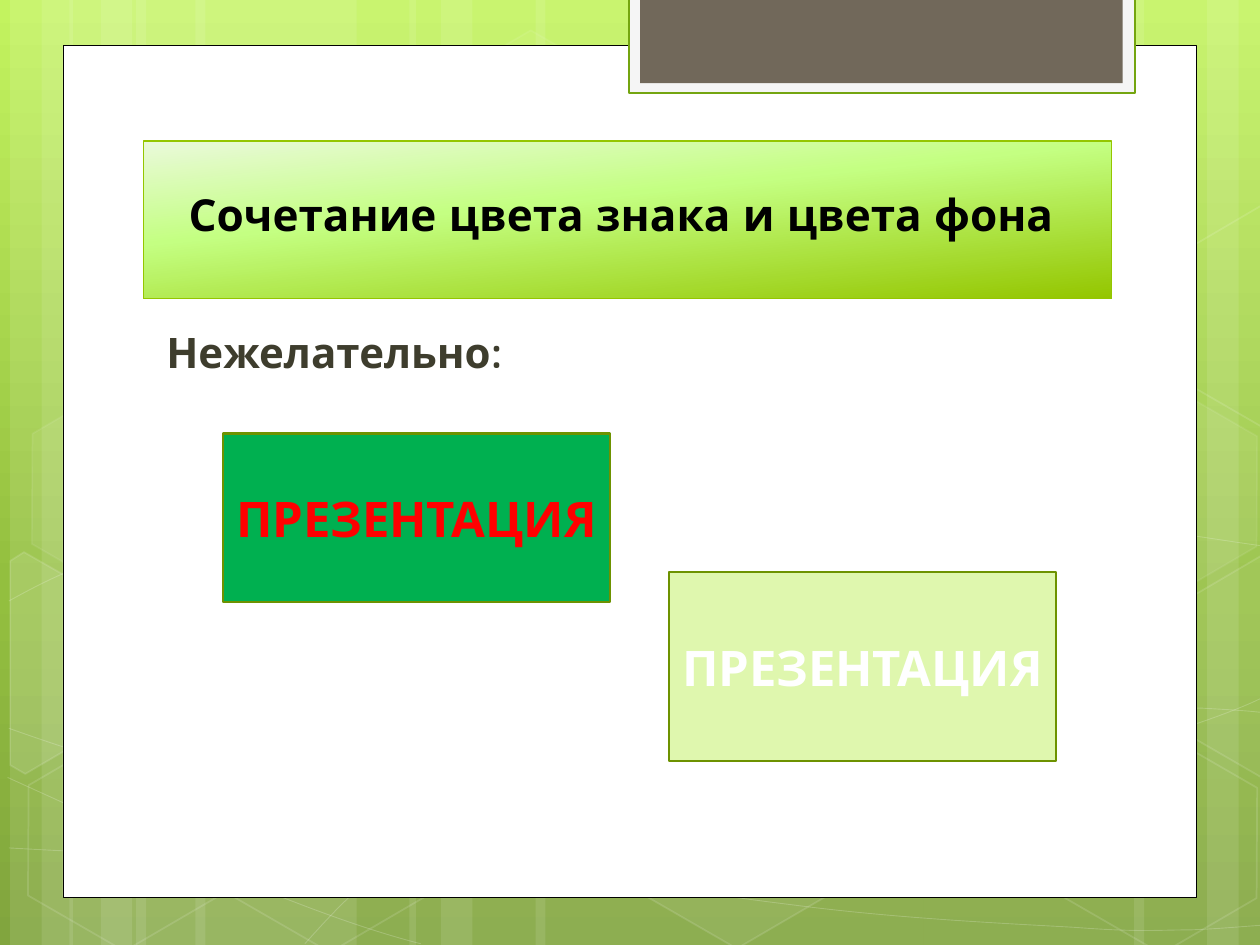
from math import cos, radians, sin

from lxml.etree import SubElement
from pptx import Presentation
from pptx.dml.color import RGBColor
from pptx.enum.shapes import MSO_SHAPE as SHAPE
from pptx.enum.text import MSO_ANCHOR as ANCHOR, PP_ALIGN as ALIGN
from pptx.oxml.ns import qn
from pptx.util import Inches, Pt

WHITE = "FFFFFF"
FONT = "Quicksand"
TILT = 30
BARS = [
    (1.08, 1.75, 0), (0.08, 0.5, 0), (0.33, 0.83, 0), (1.55, 1.75, 0), (0.55, 0.5, 0),
    (0.8, 0.83, 0), (7.33, 1.75, 180), (9.58, 0.5, 180), (9, 0.83, 180), (4.25, 3.08, 0),
    (3.25, 0.5, 0), (3.5, 0.83, 0),
]
CURVES = [
    [(0.07, 6.73), (0.61, 6.76), (1.15, 6.79), (1.9, 6.78), (2.65, 6.77), (3.58, 6.75),
     (4.58, 6.65), (5.58, 6.55), (7, 6.36), (7.92, 6.17), (8.83, 5.98), (9.77, 5.68),
     (10.07, 5.51)],
    [(0.07, 4.77), (0.36, 4.61), (0.65, 4.46), (1.21, 4.31), (1.78, 4.16), (2.59, 3.94),
     (3.47, 3.87), (4.36, 3.8), (5.44, 3.79), (6.54, 3.87), (7.64, 3.95), (9.47, 4.26),
     (10.07, 4.34)],
    [(0.06, 6.17), (1.27, 6.72), (2.47, 7.27), (3.34, 7.49)],
    [(0.07, 5.78), (0.38, 5.89), (0.7, 6), (1.28, 6.16), (1.86, 6.31), (2.73, 6.56),
     (3.57, 6.73), (4.4, 6.9), (5.45, 7.08), (6.28, 7.18), (7.11, 7.29), (8, 7.33),
     (8.53, 7.36), (9.05, 7.4), (9.19, 7.38), (9.45, 7.38), (9.71, 7.37), (9.89, 7.35),
     (10.07, 7.34)],
    [(2.42, 7.49), (2.6, 7.29), (2.78, 7.09), (3.02, 6.91), (3.26, 6.73), (3.6, 6.53),
     (3.88, 6.39), (4.16, 6.25), (4.33, 6.19), (4.7, 6.09), (5.06, 5.99), (5.73, 5.85),
     (6.08, 5.78), (6.44, 5.71), (6.49, 5.71), (6.8, 5.69), (7.11, 5.66), (7.6, 5.63),
     (7.94, 5.62), (8.29, 5.61), (8.86, 5.62), (8.86, 5.62), (8.86, 5.62), (9.53, 5.62),
     (9.53, 5.62), (9.71, 5.63), (9.88, 5.64), (9.97, 5.65), (10.06, 5.66), (10.03, 5.65),
     (10.06, 5.66)],
]
HEXAGONS = [
    (3.34, 0.36, 4, 8), (4.97, 5.89, 6, 12), (0.11, 5.91, None, 12), (0.14, 3.12, 7, 8),
    (1.74, 5.92, None, 12), (7.53, 4.53, 10, 12), (8.34, 5.93, None, 12), (8.34, 3.14, 7, 8),
]
CUT_HEXAGONS = [
    ((0.36, 5.35), 10,
     [(0.08, 4.45), (0.19, 4.38), (0.96, 4.82), (0.95, 5.7), (0.2, 6.14), (0.08, 6.07)]),
    ((9.85, 5.2), 4,
     [(9.26, 4.85), (10.01, 4.41), (10.09, 4.46), (10.09, 6.13), (10.02, 6.17), (9.26, 5.73)]),
    ((9.85, 2.41), None,
     [(9.26, 2.07), (10.01, 1.63), (10.1, 1.68), (10.09, 3.35), (10.02, 3.39), (9.26, 2.95)]),
]


def rgb(color):
    """Turn a hex string into a colour."""
    return RGBColor.from_string(color)


def set_alpha(sp, query, percent):
    """Set the opacity of the colour found under the shape properties."""
    for clr in sp.element.spPr.xpath(query):
        SubElement(clr, qn("a:alpha"), val=str(percent * 1000))


def style(sp, fill=None, line=None, width=1, fill_alpha=None, line_alpha=None):
    """Apply fill, outline and opacity, without a shadow."""
    sp.shadow.inherit = False
    if fill:
        sp.fill.solid()
        sp.fill.fore_color.rgb = rgb(fill)
    else:
        sp.fill.background()
    if line:
        sp.line.color.rgb = rgb(line)
        sp.line.width = Pt(width)
    else:
        sp.line.fill.background()
    if fill_alpha:
        set_alpha(sp, "a:solidFill/a:srgbClr", fill_alpha)
    if line_alpha:
        set_alpha(sp, "a:ln/a:solidFill/a:srgbClr", line_alpha)
    return sp


def set_gradient(owner, fill, stops, angle):
    """Give the fill of a slide or shape a clockwise linear gradient."""
    fill.gradient()
    fill.gradient_angle = 360 - angle
    stop_list = next(owner.element.iter(qn("a:gsLst")))
    for old in list(stop_list):
        stop_list.remove(old)
    for position, color in stops:
        stop = SubElement(stop_list, qn("a:gs"), pos=str(position * 1000))
        SubElement(stop, qn("a:srgbClr"), val=color)


def add_box(s, x, y, w, h, kind=SHAPE.RECTANGLE, **look):
    """Add a preset shape."""
    sp = s.shapes.add_shape(kind, Inches(x), Inches(y), Inches(w), Inches(h))
    return style(sp, **look)


def add_outline(s, points, close, **look):
    """Add a freeform through the points."""
    start, *rest = [(Inches(x), Inches(y)) for x, y in points]
    builder = s.shapes.build_freeform(*start)
    builder.add_line_segments(rest, close=close)
    return style(builder.convert_to_shape(), **look)


def add_curve(s, points, **look):
    """Add an open chain of cubic Bezier segments."""
    sp = add_outline(s, points, False, **look)
    segments = list(sp.element.iter(qn("a:lnTo")))
    outline = segments[0].getparent()
    for i in range(0, len(segments), 3):
        bend = SubElement(outline, qn("a:cubicBezTo"))
        for segment in segments[i:i + 3]:
            bend.append(segment[0])
            outline.remove(segment)


def turn_back(points, center):
    """Rotate points counterclockwise by the tilt around a centre."""
    cx, cy = center
    c, n = cos(radians(TILT)), sin(radians(TILT))
    return [(cx + c * (x - cx) + n * (y - cy), cy - n * (x - cx) + c * (y - cy))
            for x, y in points]


def add_text(sp, text, size, color, align=ALIGN.CENTER, anchor=ANCHOR.MIDDLE):
    """Write one bold run into a shape."""
    tf = sp.text_frame
    tf.word_wrap = True
    tf.vertical_anchor = anchor
    p = tf.paragraphs[0]
    p.alignment = align
    r = p.add_run()
    r.text = text
    r.font.name = FONT
    r.font.size = Pt(size)
    r.font.bold = True
    r.font.color.rgb = rgb(color)
    return tf


def add_backdrop(s):
    """Draw the green background with its translucent ornaments."""
    set_gradient(s, s.background.fill, [(0, "C3F35F"), (62, "93BF3F"), (100, "81A53E")], 90)
    for x, w, rotation in BARS:
        add_box(s, x, 0, w, 7.5, fill=WHITE, fill_alpha=10).rotation = rotation
    for curve in CURVES:
        add_curve(s, curve, line=WHITE, width=0.5, line_alpha=20)
    for x, y, alpha, line_alpha in HEXAGONS:
        sp = add_box(s, x, y, 1.75, 1.52, SHAPE.HEXAGON, fill=alpha and WHITE,
                     fill_alpha=alpha, line=WHITE, line_alpha=line_alpha)
        sp.adjustments[0] = 0.285
        sp.rotation = TILT
    for center, alpha, points in CUT_HEXAGONS:
        sp = add_outline(s, turn_back(points, center), True, fill=alpha and WHITE,
                         fill_alpha=alpha, line=WHITE, line_alpha=12)
        sp.rotation = TILT


def add_panel(s):
    """Draw the white panel and its tab."""
    add_box(s, 0.5, 0.36, 9, 6.76, fill=WHITE, line="000000", width=0.5)
    add_box(s, 4.99, -0.02, 4.02, 0.76, fill="F5F5F5", line="74A510", width=1.25)
    add_box(s, 5.08, -0.02, 3.83, 0.68, fill="71685A")


def add_title(s):
    """Add the title on its gradient bar."""
    bar = add_box(s, 1.14, 1.12, 7.68, 1.25, line="94C600", width=0.75)
    set_gradient(bar, bar.fill, [(0, "EAF9DA"), (40, "C4FF82"), (100, "94C600")], 84)
    tf = add_text(bar, "Сочетание цвета знака и цвета фона", 25.2, "000000")
    tf.margin_right = Inches(0.2)
    tf.margin_bottom = Inches(0.14)


def add_heading(s):
    """Add the heading above the samples."""
    box = s.shapes.add_textbox(Inches(1.14), Inches(2.54), Inches(7.41), Inches(3.84))
    tf = add_text(box, "Нежелательно:", 24, "3E3D2D", ALIGN.LEFT, ANCHOR.TOP)
    tf.margin_left = Inches(0.18)


def add_sample(s, x, y, h, fill, color):
    """Add a sample of text colour on a background colour."""
    sp = add_box(s, x, y, 3.07, h, fill=fill, line="6D9200", width=1.25)
    add_text(sp, "ПРЕЗЕНТАЦИЯ", 28, color)


def main():
    """Build and save the slide."""
    prs = Presentation()
    prs.slide_width, prs.slide_height = Inches(10), Inches(7.5)
    s = prs.slides.add_slide(prs.slide_layouts[6])
    add_backdrop(s)
    add_panel(s)
    add_title(s)
    add_heading(s)
    add_sample(s, 1.77, 3.44, 1.34, "00B050", "FF0000")
    add_sample(s, 5.31, 4.54, 1.5, "DFF7AE", WHITE)
    prs.save("out.pptx")


if __name__ == "__main__":
    main()
